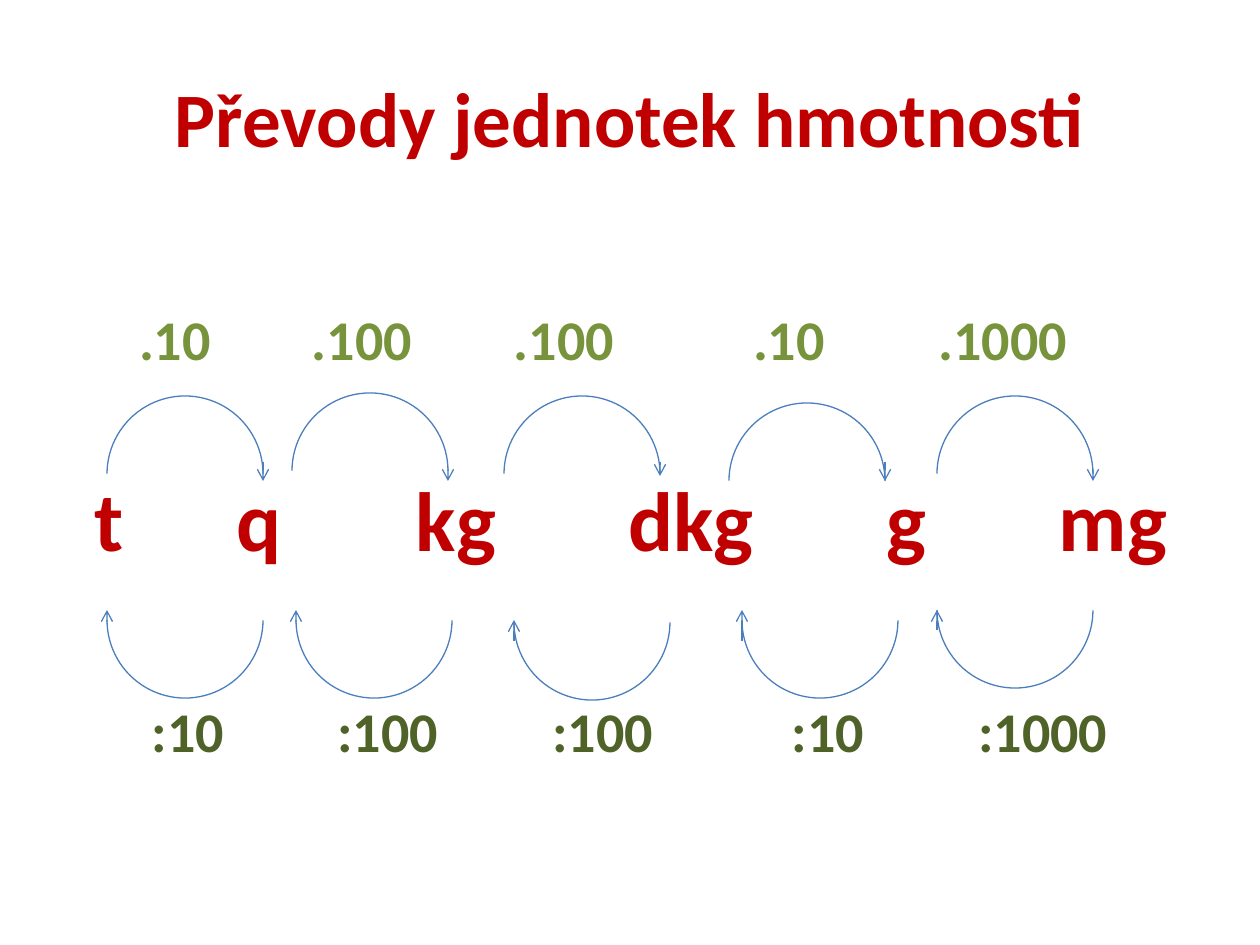
from lxml import etree
from pptx import Presentation
from pptx.dml.color import RGBColor
from pptx.enum.shapes import MSO_CONNECTOR, MSO_SHAPE
from pptx.enum.text import MSO_ANCHOR, PP_ALIGN
from pptx.oxml.ns import qn
from pptx.util import Emu, Pt

ARC = MSO_SHAPE.ARC
LINE = MSO_CONNECTOR.STRAIGHT
MIDDLE, CENTER = MSO_ANCHOR.MIDDLE, PP_ALIGN.CENTER

SCALE = 914400 // 126
FONT = "Calibri"
RED, GREEN, DARK, BLUE = "C00000", "77933C", "4F6228", "4B7EBC"

TITLE = "Převody jednotek hmotnosti"
# Each row: size, colour, space before, then (text, centre x)
ROWS = [
    (32, GREEN, 0, [(".10", 175), (".100", 362), (".100", 564),
                    (".10", 789), (".1000", 1003)]),
    (48, RED, 95, [("t", 109), ("q", 259), ("kg", 456),
                   ("dkg", 691), ("g", 906), ("mg", 1113)]),
    (32, DARK, 129, [(":10", 188), (":100", 388), (":100", 603),
                     (":10", 828), (":1000", 1043)]),
]
# Each arc: left, top, arrow start y, arrow tip y
DOWN = [(107, 396, 462, 481), (292, 393, 471, 481), (504, 396, 462, 476),
        (729, 403, 462, 481), (937, 396, 474, 481)]
UP = [(107, 542, 620, 610), (296, 542, 620, 610), (514, 544, 641, 620),
      (742, 542, 641, 610), (937, 532, 630, 610)]
ARC_SIZE = 156
BODY = (63, 220, 1134, 624)
INSET = 13


def px(n):
    return Emu(n * SCALE)


def rgb(code):
    return RGBColor.from_string(code)


def add_run(para, text, size, color):
    run = para.add_run()
    run.text = text
    font = run.font
    font.name, font.size, font.bold = FONT, Pt(size), True
    font.color.rgb = rgb(color)


def set_tabs(para, stops):
    """Give each item of the row its own centred tab stop."""
    tabs = etree.SubElement(para._p.get_or_add_pPr(), qn("a:tabLst"))
    for stop in stops:
        etree.SubElement(tabs, qn("a:tab"), pos=str(px(stop)), algn="ctr")


def style(line):
    line.color.rgb = rgb(BLUE)
    line.width = Pt(0.75)


def add_arc(shapes, left, top, turn):
    arc = shapes.add_shape(ARC, px(left), px(top), px(ARC_SIZE), px(ARC_SIZE))
    arc.adjustments[0], arc.adjustments[1] = 108.17, 0
    arc.rotation = turn
    arc.fill.background()
    arc.shadow.inherit = False
    style(arc.line)


def add_arrow(shapes, x, start, tip):
    arrow = shapes.add_connector(LINE, px(x), px(start), px(x), px(tip))
    style(arrow.line)
    etree.SubElement(arrow.line._get_or_add_ln(), qn("a:tailEnd"), type="arrow")
    etree.SubElement(arrow._element.spPr, qn("a:effectLst"))


def main():
    deck = Presentation()
    deck.slide_width, deck.slide_height = px(1260), px(945)
    slide = deck.slides.add_slide(deck.slide_layouts[5])
    shapes = slide.shapes

    title = shapes.title
    title.left, title.top, title.width, title.height = map(
        px, (63, 38, 1134, 157))
    title.text_frame.vertical_anchor = MIDDLE
    head = title.text_frame.paragraphs[0]
    head.alignment = CENTER
    add_run(head, TITLE, 44, RED)

    frame = shapes.add_textbox(*map(px, BODY)).text_frame
    frame.word_wrap = True
    frame.margin_left = frame.margin_right = px(INSET)
    frame.margin_top = px(85)
    for i, (size, color, gap, items) in enumerate(ROWS):
        para = frame.add_paragraph() if i else frame.paragraphs[0]
        para.space_before = px(gap)
        set_tabs(para, [x - BODY[0] - INSET for _, x in items])
        for text, _ in items:
            add_run(para, "\t" + text, size, color)

    for arcs, turn, shift in ((DOWN, 0, ARC_SIZE), (UP, 180, 0)):
        for left, top, start, tip in arcs:
            add_arc(shapes, left, top, turn)
            add_arrow(shapes, left + shift, start, tip)

    deck.save("out.pptx")


if __name__ == "__main__":
    main()
